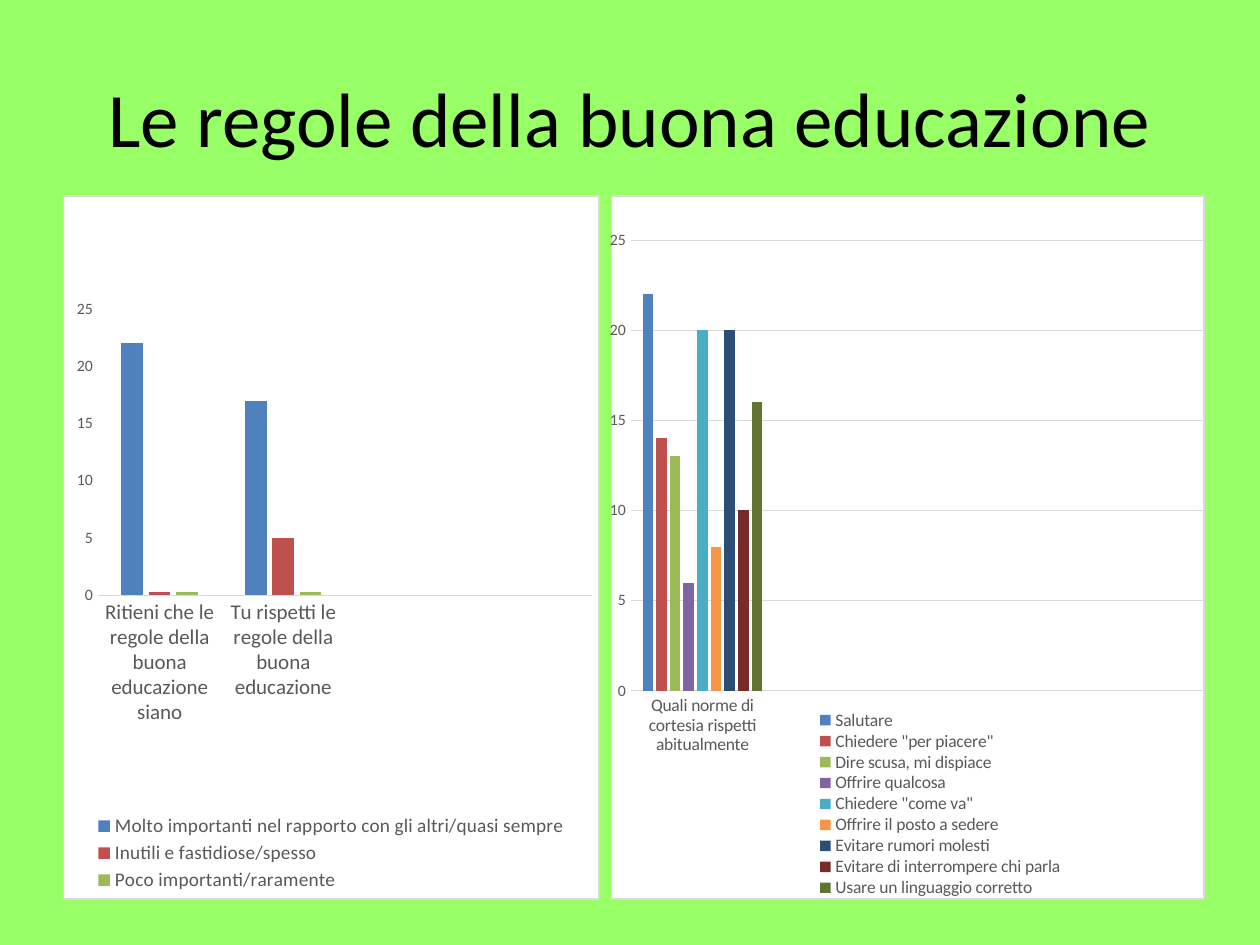
from typing import NamedTuple, Optional

from lxml import etree
from pptx import Presentation
from pptx.chart.data import CategoryChartData
from pptx.dml.color import RGBColor
from pptx.enum.chart import XL_CHART_TYPE, XL_LEGEND_POSITION, XL_TICK_MARK
from pptx.enum.text import MSO_ANCHOR, PP_ALIGN
from pptx.oxml import parse_xml
from pptx.oxml.ns import nsdecls, qn
from pptx.util import Inches, Pt

COLUMNS = XL_CHART_TYPE.COLUMN_CLUSTERED
BOTTOM = XL_LEGEND_POSITION.BOTTOM
NO_TICK = XL_TICK_MARK.NONE
CENTER = PP_ALIGN.CENTER
MIDDLE = MSO_ANCHOR.MIDDLE

FONT = "Calibri"
COLORS = {
    "background": "99FF66",
    "title": "000000",
    "label": "595959",
    "rule": "D9D9D9",
    "panel": "FFFFFF",
}
SERIES_COLORS = ["4F81BD", "C0504D", "9BBB59", "8064A2", "4BACC6",
                 "F79646", "2C4D75", "772C2A", "5F7530"]
CATEGORY_SLOTS = 4  # unused slots stay empty on the right
CHART_TOP, CHART_HEIGHT = 1.55, 5.59


class Area(NamedTuple):
    """Place inside a chart, as fractions of its size."""
    x: float
    y: float
    w: float
    h: float


class Answer(NamedTuple):
    name: str
    values: list[float]


class Survey(NamedTuple):
    left: float
    width: float
    questions: list[str]
    answers: list[Answer]
    plot_area: Area
    legend_area: Area
    question_size: int
    legend_size: int
    gridlines: bool


SURVEYS = [
    Survey(
        0.5, 4.26,
        ["Ritieni che le regole della buona educazione siano",
         "Tu rispetti le regole della buona educazione"],
        [Answer("Molto importanti nel rapporto con gli altri/quasi sempre", [22, 17]),
         Answer("Inutili e fastidiose/spesso", [0.3, 5]),
         Answer("Poco importanti/raramente", [0.3, 0.3])],
        Area(0.064, 0.161, 0.924, 0.407), Area(0.05, 0.875, 0.9, 0.12),
        question_size=12, legend_size=11, gridlines=False),
    Survey(
        4.84, 4.72,
        ["Quali norme di cortesia rispetti abitualmente"],
        [Answer("Salutare", [22]),
         Answer('Chiedere "per piacere"', [14]),
         Answer("Dire scusa, mi dispiace", [13]),
         Answer("Offrire qualcosa", [6]),
         Answer('Chiedere "come va"', [20]),
         Answer("Offrire il posto a sedere", [8]),
         Answer("Evitare rumori molesti", [20]),
         Answer("Evitare di interrompere chi parla", [10]),
         Answer("Usare un linguaggio corretto", [16])],
        Area(0.056, 0.063, 0.967, 0.641), Area(0.34, 0.73, 0.43, 0.27),
        question_size=10, legend_size=10, gridlines=True),
]


def rgb(name: str) -> RGBColor:
    return RGBColor.from_string(COLORS[name])


def style_font(font, size: float, color: str) -> None:
    font.name, font.size, font.bold = FONT, Pt(size), False
    font.color.rgb = rgb(color)


def style_line(line, color: Optional[str]) -> None:
    if color is None:
        line.fill.background()
    else:
        line.color.rgb, line.width = rgb(color), Pt(0.75)


def add_text(slide, text: str, *, left: float, top: float, width: float,
             height: float, size: float, color: str) -> None:
    box = slide.shapes.add_textbox(Inches(left), Inches(top), Inches(width), Inches(height))
    frame = box.text_frame
    frame.word_wrap, frame.vertical_anchor = True, MIDDLE
    paragraph = frame.paragraphs[0]
    paragraph.text, paragraph.alignment = text, CENTER
    style_font(paragraph.font, size, color)


def set_layout(parent: etree._Element, area: Area, index: int, inner: bool = False) -> None:
    """Fix the place of a plot area or legend."""
    for old in parent.findall(qn("c:layout")):
        parent.remove(old)
    target = '<c:layoutTarget val="inner"/>' if inner else ""
    modes = '<c:xMode val="edge"/><c:yMode val="edge"/>'
    places = "".join(f'<c:{key} val="{value}"/>' for key, value in area._asdict().items())
    parent.insert(index, parse_xml(
        f'<c:layout {nsdecls("c")}><c:manualLayout>{target}{modes}{places}'
        '</c:manualLayout></c:layout>'))


def set_panel(chart_space: etree._Element) -> None:
    """Give the chart its filled, bordered panel."""
    chart_space.find(qn("c:chart")).addnext(parse_xml(
        f'<c:spPr {nsdecls("c", "a")}>'
        f'<a:solidFill><a:srgbClr val="{COLORS["panel"]}"/></a:solidFill>'
        f'<a:ln w="{Pt(0.75)}"><a:solidFill><a:srgbClr val="{COLORS["rule"]}"/>'
        '</a:solidFill></a:ln></c:spPr>'))


def add_survey(slide, survey: Survey) -> None:
    empty = CATEGORY_SLOTS - len(survey.questions)
    data = CategoryChartData()
    data.categories = survey.questions + [""] * empty
    for answer in survey.answers:
        data.add_series(answer.name, answer.values + [None] * empty)
    chart = slide.shapes.add_chart(
        COLUMNS, Inches(survey.left), Inches(CHART_TOP),
        Inches(survey.width), Inches(CHART_HEIGHT), data).chart
    chart.has_title = False
    style_font(chart.font, 10, "title")
    set_panel(chart._chartSpace)

    # Columns
    plot = chart.plots[0]
    plot.gap_width, plot.overlap, plot.vary_by_categories = 219, -27, False
    for series, color in zip(plot.series, SERIES_COLORS):
        series.format.fill.solid()
        series.format.fill.fore_color.rgb = RGBColor.from_string(color)
        series.invert_if_negative = False
    set_layout(chart._chartSpace.chart.plotArea, survey.plot_area, 0, inner=True)

    # Axes
    values, questions = chart.value_axis, chart.category_axis
    values.minimum_scale, values.maximum_scale, values.major_unit = 0, 25, 5
    values.has_major_gridlines = survey.gridlines
    if survey.gridlines:
        style_line(values.major_gridlines.format.line, "rule")
    for axis, size, line in ((values, 9, None), (questions, survey.question_size, "rule")):
        axis.major_tick_mark = axis.minor_tick_mark = NO_TICK
        style_font(axis.tick_labels.font, size, "label")
        style_line(axis.format.line, line)

    # Legend
    chart.has_legend = True
    legend = chart.legend
    legend.position, legend.include_in_layout = BOTTOM, False
    style_font(legend.font, survey.legend_size, "label")
    set_layout(legend._element, survey.legend_area, 1)


def main() -> None:
    deck = Presentation()
    deck.slide_width, deck.slide_height = Inches(10), Inches(7.5)
    slide = deck.slides.add_slide(deck.slide_layouts[6])
    slide.background.fill.solid()
    slide.background.fill.fore_color.rgb = rgb("background")

    add_text(slide, "Le regole della buona educazione", left=0.5, top=0.3,
             width=9, height=1.25, size=44, color="title")
    for survey in SURVEYS:
        add_survey(slide, survey)
    deck.save("out.pptx")


if __name__ == "__main__":
    main()
